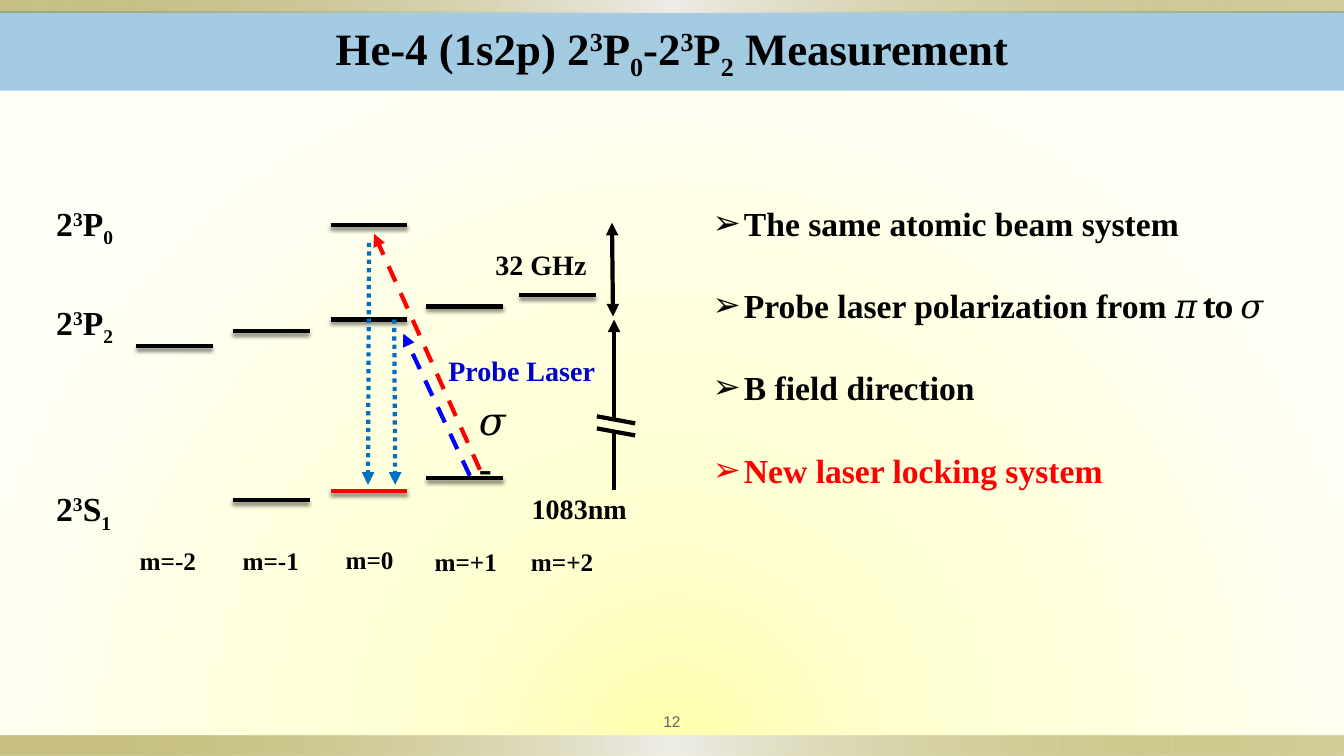
"""Build the He-4 fine structure measurement slide with its level diagram."""
import pptx
import pptx.dml.color
import pptx.enum.dml
import pptx.enum.shapes
import pptx.enum.text
import pptx.oxml
import pptx.oxml.ns
import pptx.util

Inches, Pt = pptx.util.Inches, pptx.util.Pt
RGBColor = pptx.dml.color.RGBColor
PP_ALIGN = pptx.enum.text.PP_ALIGN
MSO_ANCHOR = pptx.enum.text.MSO_ANCHOR
MSO_LINE = pptx.enum.dml.MSO_LINE
BLACK = RGBColor(0x00, 0x00, 0x00)
RED = RGBColor(0xFF, 0x00, 0x00)
BLUE = RGBColor(0x00, 0x00, 0xFF)
LABEL_BLUE = RGBColor(0x00, 0x00, 0xCC)
BAND_BLUE = RGBColor(0x00, 0x70, 0xC0)
GREY = RGBColor(0x63, 0x63, 0x63)
NS = pptx.oxml.ns.nsdecls("a")
SERIF = "Times New Roman"
BASELINES = {"^": "30000", "_": "-25000"}


def write(p, text, size, color=BLACK, font=SERIF, bold=True):
    for part in text.split("|"):
        r = p.add_run()
        r.text = part.lstrip("^_")
        for name, value in {"size": Pt(size), "name": font, "bold": bold}.items():
            setattr(r.font, name, value)
        r.font.color.rgb = color
        if part[0] in BASELINES:
            r.font._element.set("baseline", BASELINES[part[0]])


def add_line(x1, y1, x2, y2, color=BLACK, dash=None, ends=(), shadow=""):
    line = s.shapes.add_connector(pptx.enum.shapes.MSO_CONNECTOR.STRAIGHT,
                                  Inches(x1), Inches(y1), Inches(x2), Inches(y2))
    line.line.color.rgb = color
    line.line.width = Pt(3)
    if dash:
        line.line.dash_style = dash
    for end in ends:
        line.line._ln.append(pptx.oxml.parse_xml(f'<a:{end}End {NS} type="triangle"/>'))
    line._element.spPr.append(pptx.oxml.parse_xml(f"<a:effectLst {NS}>{shadow}</a:effectLst>"))


prs = pptx.Presentation()
prs.slide_width, prs.slide_height = Inches(13.33), Inches(7.5)
s = prs.slides.add_slide(prs.slide_layouts[5])

BACKDROP = ([(0, "FFFFAC", 100), (31, "FFFFD2", 100), (100, "FFFFF7", 100)],
            '<a:path path="circle"><a:fillToRect l="50000" t="150000" r="50000"/></a:path>')
GOLD = ([(0, "918415", 50), (50, "EEEDE8", 100), (100, "918415", 40)], '<a:lin ang="0"/>')
s.background.fill.solid()
gradients = [(s.element.xpath(".//p:bgPr")[0], BACKDROP)]
for top, height in [(7.3, 0.2), (0, 0.12)]:
    bar = s.shapes.add_shape(pptx.enum.shapes.MSO_SHAPE.RECTANGLE,
                             0, Inches(top), Inches(13.33), Inches(height))
    bar.shadow.inherit = False
    bar.fill.solid()
    bar.line.fill.background()
    gradients.append((bar._element.spPr, GOLD))
for parent, (stops, shade) in gradients:
    stops_xml = "".join(
        f'<a:gs pos="{pos * 1000}"><a:srgbClr val="{rgb}"><a:alpha val="{alpha * 1000}"/>'
        "</a:srgbClr></a:gs>" for pos, rgb, alpha in stops)
    solid = parent.find(pptx.oxml.ns.qn("a:solidFill"))
    parent.replace(solid, pptx.oxml.parse_xml(
        f'<a:gradFill {NS} rotWithShape="1"><a:gsLst>{stops_xml}</a:gsLst>{shade}</a:gradFill>'))

title = s.shapes.title
for name, value in {"left": 0, "top": 0.11, "width": 13.33, "height": 0.79}.items():
    setattr(title, name, Inches(value))
title.fill.solid()
title.fill.fore_color.rgb = BAND_BLUE
title._element.spPr.xpath("./a:solidFill/a:srgbClr")[0].append(
    pptx.oxml.parse_xml(f'<a:alpha {NS} val="36000"/>'))
tf = title.text_frame
tf.auto_size = pptx.enum.text.MSO_AUTO_SIZE.NONE
tf.vertical_anchor = MSO_ANCHOR.MIDDLE
tf.paragraphs[0].alignment = PP_ALIGN.CENTER
write(tf.paragraphs[0], "He-4 (1s2p) 2|^3|P|_0|-2|^3|P|_2| Measurement", 32)

LEVEL_SHADOW = ('<a:outerShdw blurRad="35560" dist="31750" dir="5400000" rotWithShape="0">'
                '<a:srgbClr val="000000"><a:alpha val="50000"/></a:srgbClr></a:outerShdw>')
COLUMNS = {-2: 1.35, -1: 2.31, 0: 3.28, 1: 4.23, 2: 5.15}
LEVELS = [
    (0, 2.23, BLACK),
    (-2, 3.43, BLACK), (-1, 3.28, BLACK), (0, 3.17, BLACK), (1, 3.04, BLACK), (2, 2.93, BLACK),
    (-1, 4.96, BLACK), (0, 4.87, RED), (1, 4.74, BLACK),
]
for m, y, color in LEVELS:
    add_line(COLUMNS[m], y, COLUMNS[m] + 0.76, y, color, shadow=LEVEL_SHADOW)

add_line(4.66, 4.72, 4, 3.31, BLUE, MSO_LINE.DASH, ["tail"])
add_line(4.76, 4.66, 3.71, 2.32, RED, MSO_LINE.DASH, ["tail"])
add_line(3.91, 3.17, 3.92, 4.81, BAND_BLUE, MSO_LINE.ROUND_DOT, ["tail"])
add_line(3.66, 2.41, 3.65, 4.81, BAND_BLUE, MSO_LINE.ROUND_DOT, ["tail"])
add_line(6.07, 2.21, 6.08, 3.14, ends=["head", "tail"])
add_line(6.09, 4.86, 6.09, 4.29)
add_line(6.09, 4.18, 6.09, 3.17, ends=["tail"])
for y in (4.13, 4.25):
    add_line(5.92, y, 6.3, y + 0.07)

LABELS = [
    ("2|^3|P|_0", 0.44, 1.99, 0.8, 0.5, 24, BLACK),
    ("2|^3|P|_2", 0.44, 2.97, 0.8, 0.5, 24, BLACK),
    ("2|^3|S|_1", 0.44, 4.82, 0.78, 0.5, 24, BLACK),
    ("m=-2", 1.22, 5.36, 0.89, 0.4, 18, BLACK),
    ("m=-1", 2.24, 5.36, 0.89, 0.4, 18, BLACK),
    ("m=0", 3.22, 5.35, 0.89, 0.4, 18, BLACK),
    ("m=+1", 4.11, 5.37, 1.02, 0.4, 18, BLACK),
    ("m=+2", 5.08, 5.37, 0.99, 0.4, 18, BLACK),
    ("32 GHz", 4.81, 2.4, 1.11, 0.44, 20, BLACK),
    ("1083nm", 5.17, 4.82, 1.15, 0.44, 20, BLACK),
    ("Probe Laser", 4.34, 3.45, 1.67, 0.44, 20, LABEL_BLUE),
]
for text, x, y, w, h, size, color in LABELS:
    tf = s.shapes.add_textbox(Inches(x), Inches(y), Inches(w), Inches(h)).text_frame
    tf.word_wrap = False
    tf.vertical_anchor = MSO_ANCHOR.MIDDLE
    tf.paragraphs[0].alignment = PP_ALIGN.CENTER
    write(tf.paragraphs[0], text, size, color)

tf = s.shapes.add_textbox(Inches(4.65), Inches(3.88), Inches(0.58), Inches(0.57)).text_frame
tf.word_wrap = True
write(tf.paragraphs[0], "𝜎-", 28)

tf = s.shapes.add_textbox(Inches(6), Inches(7), Inches(1.33), Inches(0.31)).text_frame
tf.vertical_anchor = MSO_ANCHOR.MIDDLE
tf.paragraphs[0].alignment = PP_ALIGN.CENTER
write(tf.paragraphs[0], "12", 11, GREY, "Arial", False)

POINTS = [
    [("The same atomic beam system", BLACK, SERIF)],
    [("Probe laser polarization from ", BLACK, SERIF), ("𝜋 to 𝜎", BLACK, "Cambria")],
    [("B field direction", BLACK, SERIF)],
    [("New laser locking system", RED, SERIF)],
]
tf = s.shapes.add_textbox(Inches(6.97), Inches(1.76), Inches(5.95), Inches(4.06)).text_frame
tf.word_wrap = True
tf.margin_top = Inches(0.25)
for i, runs in enumerate(POINTS):
    p = tf.add_paragraph() if i else tf.paragraphs[0]
    p.space_before = Pt(30 if i else 0)
    pPr = p._p.get_or_add_pPr()
    pPr.set("marL", str(Inches(0.31)))
    pPr.set("indent", str(-Inches(0.31)))
    pPr.append(pptx.oxml.parse_xml(f'<a:buFont {NS} typeface="Arial"/>'))
    pPr.append(pptx.oxml.parse_xml(f'<a:buChar {NS} char="➢"/>'))
    for text, color, font in runs:
        write(p, text, 24, color, font)

prs.save("out.pptx")
